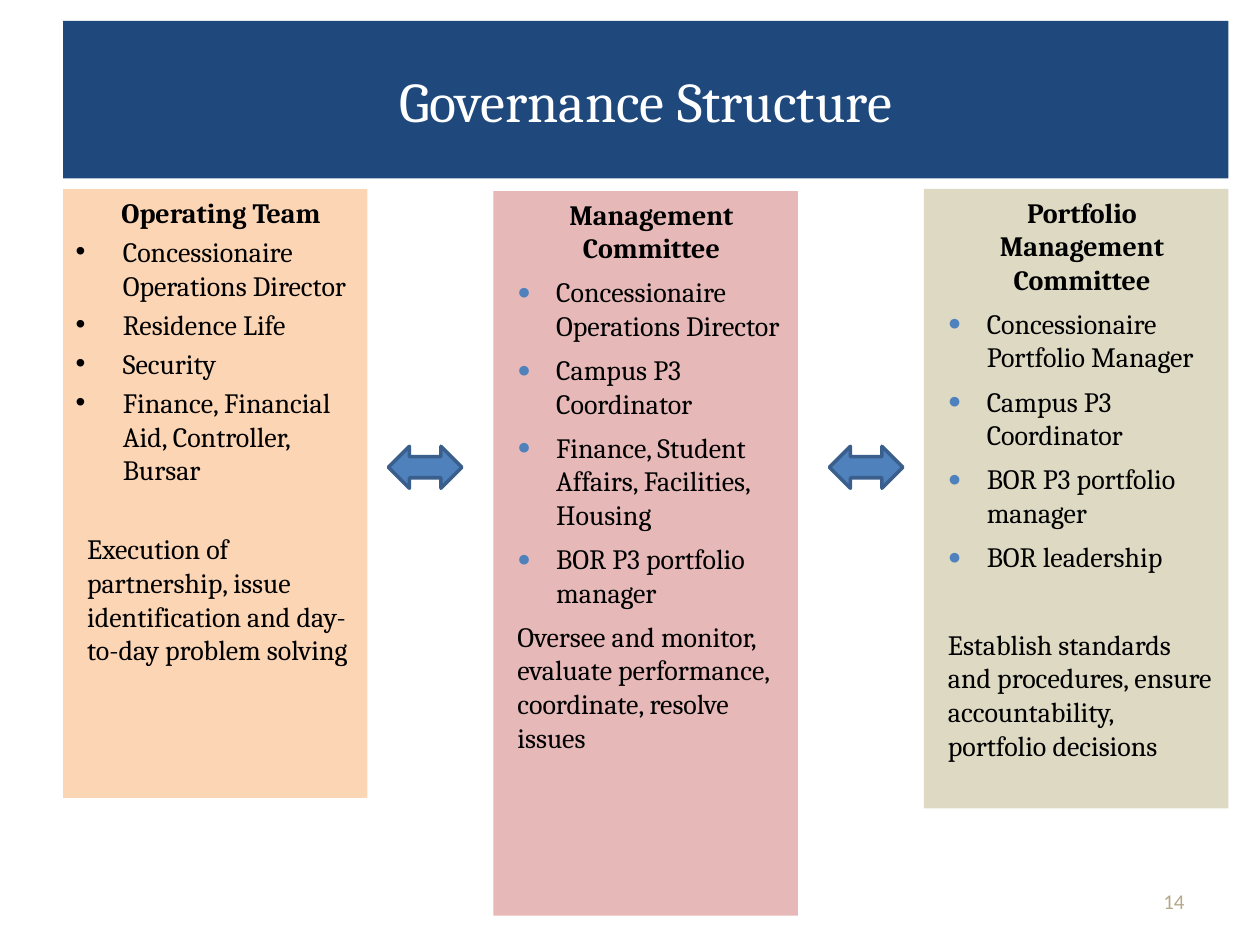
from dataclasses import dataclass
from typing import Optional

from lxml import etree
from pptx import Presentation
from pptx.dml.color import RGBColor
from pptx.enum import shapes, text
from pptx.oxml import ns
from pptx.util import Emu, Pt

EMU_PER_PX = 7620
SERIF = "Cambria"
BLACK, WHITE, BLUE = "000000", "FFFFFF", "4F81BD"
COLUMN_LEFT, COLUMN_STEP, COLUMN_WIDTH = 60, 410, 290
TEXT_INDENT = 11


@dataclass(frozen=True)
class Bullet:
    char: str
    indent: int
    hanging: int
    color: Optional[str] = None
    percent: int = 100


@dataclass(frozen=True)
class Group:
    name: str
    members: tuple[str, ...]
    role: str
    fill: str
    top: int
    height: int
    bullet: Bullet
    spacing: float
    role_spacing: float


DOT = Bullet("•", 45, 45)
DISC = Bullet("●", 48, 37, BLUE, 80)

GROUPS = (
    Group(
        "Operating Team",
        ("Concessionaire Operations Director", "Residence Life", "Security",
         "Finance, Financial Aid, Controller, Bursar"),
        "Execution of partnership, issue identification and day-to-day problem solving",
        "FCD5B5", 180, 580, DOT, 3.2, 26,
    ),
    Group(
        "Management Committee",
        ("Concessionaire Operations Director", "Campus P3 Coordinator",
         "Finance, Student Affairs, Facilities, Housing", "BOR P3 portfolio manager"),
        "Oversee and monitor, evaluate performance, coordinate, resolve issues",
        "E6B9B8", 182, 690, DISC, 6, 6,
    ),
    Group(
        "Portfolio Management Committee",
        ("Concessionaire Portfolio Manager", "Campus P3 Coordinator",
         "BOR P3 portfolio manager", "BOR leadership"),
        "Establish standards and procedures, ensure accountability, portfolio decisions",
        "DDD9C3", 180, 590, DISC, 6, 31,
    ),
)


def px(length: int) -> Emu:
    return Emu(length * EMU_PER_PX)


def rgb(color: str) -> RGBColor:
    return RGBColor.from_string(color)


def box(left: int, top: int, width: int, height: int) -> tuple[Emu, ...]:
    return px(left), px(top), px(width), px(height)


def place(shape, left: int, top: int, width: int, height: int) -> None:
    shape.left, shape.top, shape.width, shape.height = box(left, top, width, height)


def paint(shape, color: str) -> None:
    shape.fill.solid()
    shape.fill.fore_color.rgb = rgb(color)


def style(paragraph, size: int, color: str, align, font: str = SERIF, bold: bool = False) -> None:
    paragraph.alignment = align
    paragraph.font.name = font
    paragraph.font.size = Pt(size)
    paragraph.font.bold = bold
    paragraph.font.color.rgb = rgb(color)


def set_bullet(paragraph, bullet: Optional[Bullet]) -> None:
    properties = paragraph._p.get_or_add_pPr()
    properties.set("marL", str(px(bullet.indent if bullet else TEXT_INDENT)))
    properties.set("indent", str(px(-bullet.hanging if bullet else 0)))
    if bullet is None:
        etree.SubElement(properties, ns.qn("a:buNone"))
        return
    if bullet.color:
        tint = etree.SubElement(properties, ns.qn("a:buClr"))
        etree.SubElement(tint, ns.qn("a:srgbClr"), val=bullet.color)
        etree.SubElement(properties, ns.qn("a:buSzPct"), val=str(bullet.percent * 1000))
    etree.SubElement(properties, ns.qn("a:buFont"), typeface="Arial")
    etree.SubElement(properties, ns.qn("a:buChar"), char=bullet.char)


def write_group(shape, group: Group) -> None:
    paint(shape, group.fill)
    frame = shape.text_frame
    frame.word_wrap = True
    frame.auto_size = text.MSO_AUTO_SIZE.NONE
    frame.vertical_anchor = text.MSO_ANCHOR.TOP
    frame.text = "\n".join((group.name, *group.members, group.role))
    heading, *members, role = frame.paragraphs
    for paragraph in (heading, *members, role):
        set_bullet(paragraph, group.bullet if paragraph in members else None)
        style(paragraph, 16, BLACK, text.PP_ALIGN.LEFT)
        paragraph.space_before = Pt(group.spacing)
    heading.alignment = text.PP_ALIGN.CENTER
    heading.font.bold = True
    heading.space_before = Pt(0)
    role.space_before = Pt(group.role_spacing)


def add_panel(slide, left: int, group: Group) -> None:
    panel = slide.shapes.add_shape(
        shapes.MSO_SHAPE.RECTANGLE, *box(left, group.top, COLUMN_WIDTH, group.height))
    panel.shadow.inherit = False
    panel.line.fill.background()
    write_group(panel, group)


def add_exchange(slide, left: int) -> None:
    arrow = slide.shapes.add_shape(
        shapes.MSO_SHAPE.LEFT_RIGHT_ARROW, *box(left, 425, 70, 40))
    arrow.shadow.inherit = False
    paint(arrow, BLUE)
    arrow.line.color.rgb = rgb("3A5F8C")
    arrow.line.width = Pt(2)


def add_page_number(slide, number: str) -> None:
    frame = slide.shapes.add_textbox(*box(860, 834, 280, 48)).text_frame
    frame.word_wrap = True
    frame.vertical_anchor = text.MSO_ANCHOR.MIDDLE
    frame.text = number
    style(frame.paragraphs[0], 12, "B6A98A", text.PP_ALIGN.RIGHT, "Calibri")


def main() -> None:
    deck = Presentation()
    deck.slide_width, deck.slide_height = px(1200), px(900)
    slide = deck.slides.add_slide(deck.slide_layouts[1])

    title = slide.shapes.title
    place(title, 60, 20, 1110, 150)
    paint(title, "1F497D")
    title.text_frame.text = "Governance Structure"
    title.text_frame.vertical_anchor = text.MSO_ANCHOR.MIDDLE
    style(title.text_frame.paragraphs[0], 32, WHITE, text.PP_ALIGN.CENTER)

    operating, *committees = GROUPS
    team = slide.placeholders[1]
    place(team, COLUMN_LEFT, operating.top, COLUMN_WIDTH, operating.height)
    write_group(team, operating)
    add_page_number(slide, "14")
    for column, committee in enumerate(committees, start=1):
        add_panel(slide, COLUMN_LEFT + column * COLUMN_STEP, committee)
    for left in (370, 790):
        add_exchange(slide, left)

    deck.save("out.pptx")


if __name__ == "__main__":
    main()
